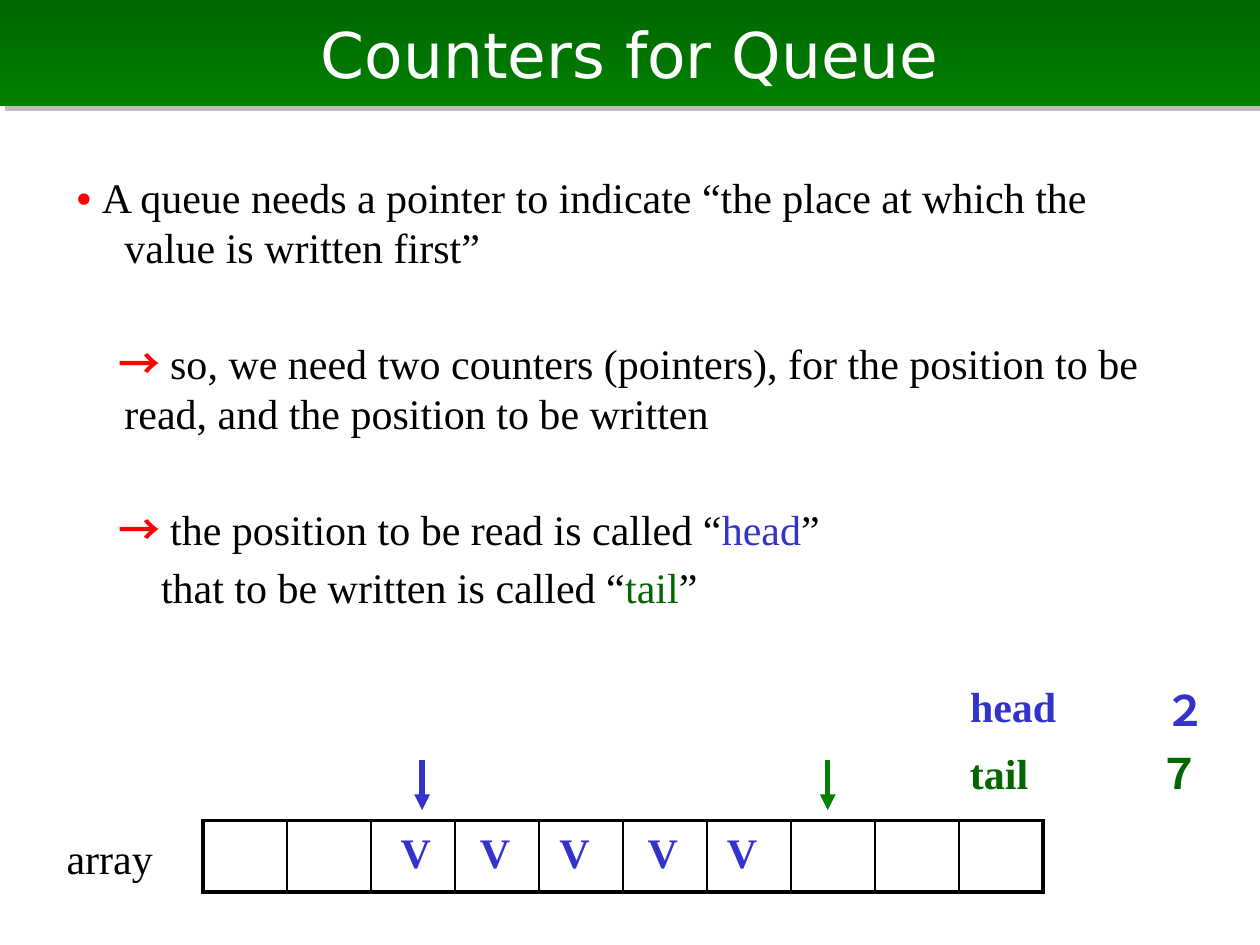
from dataclasses import dataclass
from typing import NamedTuple

from lxml.etree import SubElement
from pptx import Presentation
from pptx.dml.color import RGBColor
from pptx.enum.shapes import MSO_CONNECTOR, MSO_SHAPE
from pptx.enum.text import MSO_ANCHOR, MSO_AUTO_SIZE, PP_ALIGN as Align
from pptx.oxml.ns import qn
from pptx.util import Inches, Pt


@dataclass(frozen=True)
class Theme:
    title_font: str = "DejaVu Sans"
    body_font: str = "Times New Roman"
    title_size: float = 36
    body_size: float = 24
    black: str = "000000"
    white: str = "FFFFFF"
    red: str = "FF0000"
    head: str = "3333CC"
    tail: str = "006600"
    bright_green: str = "008000"
    shadow: str = "808080"
    thin: float = 1
    thick: float = 2.25
    arrow: float = 3


THEME = Theme()


class Span(NamedTuple):
    text: str
    color: str = THEME.black
    bold: bool = False
    font: str = THEME.body_font
    size: float = THEME.body_size


class Line(NamedTuple):
    spans: list[Span]
    space_before: float = 4.8
    margin: float = 0.38
    indent: float = -0.38


class Label(NamedTuple):
    span: Span
    left: float
    top: float
    width: float
    height: float = 0.5
    align: Align = Align.CENTER


class Pointer(NamedTuple):
    x: float
    color: str


PARAGRAPH_GAP = 37.2
LEAD = Span("　→ ", THEME.red, True)
BODY = [
    Line([
        Span("• ", THEME.red, True),
        Span("A queue needs a pointer to indicate “the place at which the value is written first”"),
    ]),
    Line([
        LEAD,
        Span("so, we need two counters (pointers), for the position to be read, "
             "and the position to be written"),
    ], PARAGRAPH_GAP),
    Line([
        LEAD,
        Span("the position to be read is called “"),
        Span("head", THEME.head),
        Span("”"),
    ], PARAGRAPH_GAP),
    Line([
        Span("that to be written is called “"),
        Span("tail", THEME.tail),
        Span("”"),
    ], margin=0.67, indent=0),
]
ARRAY_LEFT, ARRAY_TOP, CELL_WIDTH, CELL_HEIGHT = 1.61, 6.51, 0.667, 0.57
SLOTS = 10
VALUE_LEFTS = (3.08, 3.71, 4.34, 5.04, 5.67)
LABELS = [
    Label(Span("array"), 0.43, 6.56, 0.89, align=Align.LEFT),
    Label(Span("head", THEME.head, True), 7.6, 5.35, 0.89, align=Align.LEFT),
    Label(Span("tail", THEME.tail, True), 7.6, 5.88, 0.87, align=Align.LEFT),
    Label(Span("２", THEME.head, True), 9.14, 5.38, 0.43),
    Label(Span("７", THEME.tail, True), 9.1, 5.88, 0.43),
    *(Label(Span("V", THEME.head, True), left, ARRAY_TOP, 0.44, 0.51) for left in VALUE_LEFTS),
]
POINTERS = [Pointer(3.35, THEME.head), Pointer(6.57, THEME.bright_green)]


def add_span(paragraph, span: Span) -> None:
    """Append one formatted run to a paragraph."""
    run = paragraph.add_run()
    run.text = span.text
    run.font.name = span.font
    run.font.size = Pt(span.size)
    run.font.bold = span.bold
    run.font.color.rgb = RGBColor.from_string(span.color)


def draw_title(slide, text: str) -> None:
    """Draw the gradient title band with its offset shadow."""
    band = slide.shapes.add_shape(MSO_SHAPE.RECTANGLE, 0, 0, Inches(10), Inches(0.84))
    band.line.fill.background()
    band.fill.gradient()
    band.fill.gradient_angle = 270
    for stop, color, position in zip(
        band.fill.gradient_stops, (THEME.tail, THEME.bright_green), (0, 1)
    ):
        stop.color.rgb = RGBColor.from_string(color)
        stop.position = position
    band.shadow.inherit = False
    effects = band.element.spPr.find(qn("a:effectLst"))
    shadow = SubElement(effects, qn("a:outerShdw"), dist=str(Pt(4.2)), dir="2700000")
    tint = SubElement(shadow, qn("a:srgbClr"), val=THEME.shadow)
    SubElement(tint, qn("a:alpha"), val="50000")
    band.text_frame.vertical_anchor = MSO_ANCHOR.MIDDLE
    paragraph = band.text_frame.paragraphs[0]
    paragraph.alignment = Align.CENTER
    add_span(paragraph, Span(text, THEME.white, False, THEME.title_font, THEME.title_size))


def draw_body(slide, lines: list[Line]) -> None:
    """Draw the explanation with hanging indents."""
    box = slide.shapes.add_textbox(Inches(0.51), Inches(1.31), Inches(8.9), Inches(3.39))
    frame = box.text_frame
    frame.word_wrap = True
    for number, line in enumerate(lines):
        paragraph = frame.add_paragraph() if number else frame.paragraphs[0]
        paragraph.space_before = Pt(line.space_before)
        properties = paragraph._p.get_or_add_pPr()
        properties.set("marL", str(Inches(line.margin)))
        properties.set("indent", str(Inches(line.indent)))
        for span in line.spans:
            add_span(paragraph, span)


def draw_label(slide, label: Label) -> None:
    """Draw a one-line label that fits its text."""
    box = slide.shapes.add_textbox(
        Inches(label.left), Inches(label.top), Inches(label.width), Inches(label.height)
    )
    frame = box.text_frame
    frame.word_wrap = False
    frame.auto_size = MSO_AUTO_SIZE.SHAPE_TO_FIT_TEXT
    frame.paragraphs[0].alignment = label.align
    add_span(frame.paragraphs[0], label.span)


def add_border(cell, side: str, width: float) -> None:
    """Give one side of a cell a solid black border."""
    line = SubElement(cell._tc.get_or_add_tcPr(), qn(f"a:ln{side}"), w=str(Pt(width)))
    fill = SubElement(line, qn("a:solidFill"))
    SubElement(fill, qn("a:srgbClr"), val=THEME.black)


def draw_array(slide) -> None:
    """Draw the empty array as a one-row table with a thick outline."""
    table = slide.shapes.add_table(
        1, SLOTS, Inches(ARRAY_LEFT), Inches(ARRAY_TOP),
        Inches(CELL_WIDTH * SLOTS), Inches(CELL_HEIGHT),
    ).table
    table.first_row = table.horz_banding = False
    for slot, cell in enumerate(table.iter_cells()):
        add_border(cell, "L", THEME.thick if slot == 0 else THEME.thin)
        add_border(cell, "R", THEME.thick if slot == SLOTS - 1 else THEME.thin)
        add_border(cell, "T", THEME.thick)
        add_border(cell, "B", THEME.thick)
        cell.fill.background()


def draw_pointer(slide, pointer: Pointer) -> None:
    """Draw an arrow pointing down at an array slot."""
    x = Inches(pointer.x)
    arrow = slide.shapes.add_connector(MSO_CONNECTOR.STRAIGHT, x, Inches(6.03), x, Inches(6.43))
    arrow.line.width = Pt(THEME.arrow)
    arrow.line.color.rgb = RGBColor.from_string(pointer.color)
    SubElement(arrow.line._get_or_add_ln(), qn("a:tailEnd"), type="triangle")
    SubElement(arrow._element.spPr, qn("a:effectLst"))


def main() -> None:
    """Build the queue counters slide."""
    deck = Presentation()
    deck.slide_width, deck.slide_height = Inches(10), Inches(7.5)
    slide = deck.slides.add_slide(deck.slide_layouts[6])
    draw_title(slide, "Counters for Queue")
    draw_body(slide, BODY)
    draw_array(slide)
    for label in LABELS:
        draw_label(slide, label)
    for pointer in POINTERS:
        draw_pointer(slide, pointer)
    deck.save("out.pptx")


if __name__ == "__main__":
    main()
